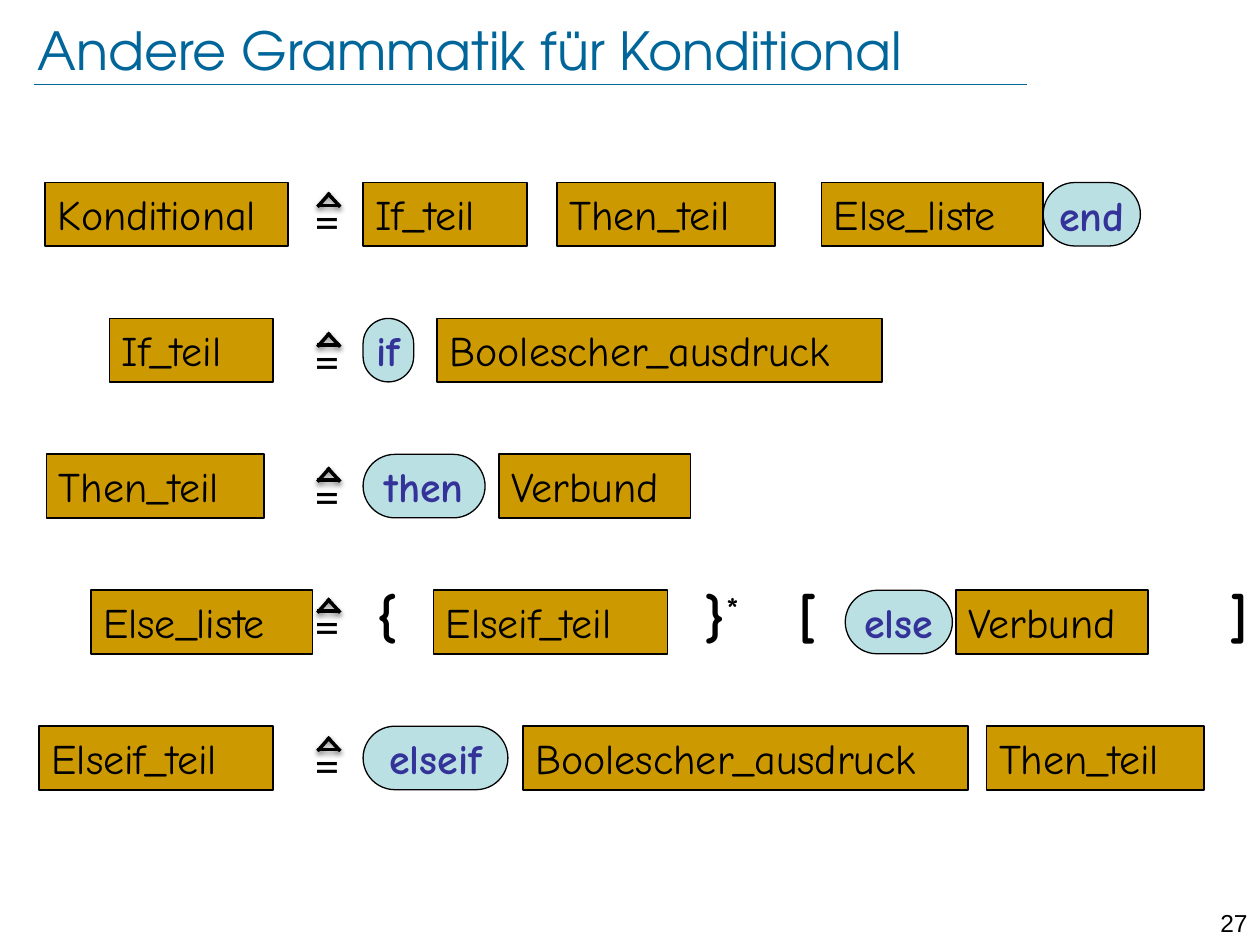
from lxml.etree import SubElement
from pptx import Presentation
from pptx.dml.color import RGBColor
from pptx.enum.shapes import MSO_CONNECTOR, MSO_SHAPE
from pptx.enum.text import MSO_ANCHOR, PP_ALIGN
from pptx.oxml.ns import qn
from pptx.util import Cm, Pt

BLACK = RGBColor(0x00, 0x00, 0x00)
TITLE_BLUE = RGBColor(0x00, 0x66, 0x99)
GOLD = RGBColor(0xCC, 0x99, 0x00)
PALE_TEAL = RGBColor(0xBB, 0xE0, 0xE3)
KEYWORD_BLUE = RGBColor(0x33, 0x33, 0x99)

FONT = "Comic Neue"
ROW_TOP = 3.68
ROW_PITCH = 2.74
BOX_HEIGHT = 1.28

CONSTRUCT_WIDTHS = {
    "Konditional": 4.9,
    "If_teil": 3.3,
    "Then_teil": 4.39,
    "Else_liste": 4.47,
    "Elseif_teil": 4.72,
    "Boolescher_ausdruck": 8.97,
    "Verbund": 3.86,
}
KEYWORD_WIDTHS = {"if": 1.02, "then": 2.46, "else": 2.16, "elseif": 2.92, "end": 1.96}
BRACKET_WIDTHS = {"{": 0.97, "}*": 1.32, "[": 0.94, "]": 0.94}

RULES = [
    (3.71, [("Konditional", 0.91), ("If_teil", 7.32), ("Then_teil", 11.23),
            ("Else_liste", 16.56), ("end", 21.03)]),
    (6.53, [("If_teil", 2.21), ("if", 7.32), ("Boolescher_ausdruck", 8.81)]),
    (9.25, [("Then_teil", 0.94), ("then", 7.32), ("Verbund", 10.06)]),
    (11.89, [("Else_liste", 1.83), ("{", 7.32), ("Elseif_teil", 8.74), ("}*", 13.89),
             ("[", 15.82), ("else", 17.04), ("Verbund", 19.28), ("]", 24.51)]),
    (14.68, [("Elseif_teil", 0.79), ("elseif", 7.32), ("Boolescher_ausdruck", 10.54),
             ("Then_teil", 19.89)]),
]


def format_font(font, size, color, name=FONT, bold=False):
    font.size = Pt(size)
    font.name = name
    font.bold = bold
    font.color.rgb = color


def write_text(shape, text, size, color, align=PP_ALIGN.LEFT, name=FONT, bold=False):
    para = shape.text_frame.paragraphs[0]
    para.text = text
    para.alignment = align
    format_font(para.runs[0].font, size, color, name, bold)


def remove_insets(frame):
    frame.margin_left = frame.margin_right = 0


def add_box(page, preset, left, top, width, fill, line_width):
    box = page.shapes.add_shape(preset, Cm(left), Cm(top), Cm(width), Cm(BOX_HEIGHT))
    box.shadow.inherit = False
    box.fill.solid()
    box.fill.fore_color.rgb = fill
    box.line.color.rgb = BLACK
    box.line.width = Pt(line_width)
    return box


def add_construct(page, text, left, top):
    box = add_box(page, MSO_SHAPE.RECTANGLE, left, top, CONSTRUCT_WIDTHS[text], GOLD, 1)
    box.text_frame.word_wrap = True
    box.text_frame.vertical_anchor = MSO_ANCHOR.TOP
    write_text(box, text, 24, BLACK)


def add_keyword(page, text, left, top):
    pill = add_box(page, MSO_SHAPE.ROUNDED_RECTANGLE, left, top,
                   KEYWORD_WIDTHS[text], PALE_TEAL, 0.75)
    pill.adjustments[0] = 0.5
    pill.text_frame.word_wrap = False
    pill.text_frame.vertical_anchor = MSO_ANCHOR.MIDDLE
    remove_insets(pill.text_frame)
    write_text(pill, text, 24, KEYWORD_BLUE, PP_ALIGN.CENTER, bold=True)


def add_label(page, left, top, width, height):
    label = page.shapes.add_textbox(Cm(left), Cm(top), Cm(width), Cm(height))
    label.text_frame.word_wrap = True
    return label


def add_bracket(page, text, left, top):
    label = add_label(page, left, top - 0.3, BRACKET_WIDTHS[text], 1.63)
    remove_insets(label.text_frame)
    write_text(label, text[0], 32, BLACK, PP_ALIGN.CENTER, bold=True)
    if text.endswith("*"):
        span = label.text_frame.paragraphs[0].add_run()
        span.text = "*"
        format_font(span.font, 32, BLACK, bold=True)
        span.font._element.set("baseline", "30000")


def add_line(page, start, end, color, width):
    line = page.shapes.add_connector(
        MSO_CONNECTOR.STRAIGHT, Cm(start[0]), Cm(start[1]), Cm(end[0]), Cm(end[1]))
    line.line.color.rgb = color
    line.line.width = Pt(width)
    effects = SubElement(line._element.spPr, qn("a:effectLst"))
    return effects


def add_shadow(effects):
    shadow = SubElement(effects, qn("a:outerShdw"), blurRad=str(Pt(3.1)),
                        dist=str(Pt(1.6)), dir="5400000", rotWithShape="0")
    color = SubElement(shadow, qn("a:srgbClr"), val=str(BLACK))
    SubElement(color, qn("a:alpha"), val="38000")


def add_definition_sign(page, top):
    label = add_label(page, 6.1, top, 1.07, 1.45)
    write_text(label, "=", 28, BLACK, name="Calibri")
    apex, foot, base = top + 0.18, top + 0.46, top + 0.43
    for start, end in [((6.6, apex), (6.86, foot)),
                       ((6.65, apex), (6.4, foot)),
                       ((6.86, base), (6.4, base))]:
        add_shadow(add_line(page, start, end, BLACK, 2))


def add_symbol(page, text, left, top):
    if text in CONSTRUCT_WIDTHS:
        add_construct(page, text, left, top)
    elif text in KEYWORD_WIDTHS:
        add_keyword(page, text, left, top)
    else:
        add_bracket(page, text, left, top)


def set_title(page, text):
    title = page.shapes.title
    title.left, title.top = Cm(0.76), Cm(0.38)
    title.width, title.height = Cm(22.63), Cm(1.24)
    frame = title.text_frame
    remove_insets(frame)
    frame.margin_top = frame.margin_bottom = 0
    frame.vertical_anchor = MSO_ANCHOR.MIDDLE
    write_text(title, text, 30, TITLE_BLUE, name="TeX Gyre Adventor")


def main():
    deck = Presentation()
    deck.slide_width, deck.slide_height = Cm(25.4), Cm(19.05)
    page = deck.slides.add_slide(deck.slide_layouts[5])
    set_title(page, "Andere Grammatik für Konditional")
    add_line(page, (0.69, 1.7), (20.7, 1.7), TITLE_BLUE, 0.25)
    for row, (sign_top, symbols) in enumerate(RULES):
        for text, left in symbols:
            add_symbol(page, text, left, ROW_TOP + row * ROW_PITCH)
        add_definition_sign(page, sign_top)
    number = add_label(page, 24, 18.19, 1.4, 0.61)
    write_text(number, "27", 14, BLACK, PP_ALIGN.RIGHT, "Arial")
    deck.save("out.pptx")


if __name__ == "__main__":
    main()
